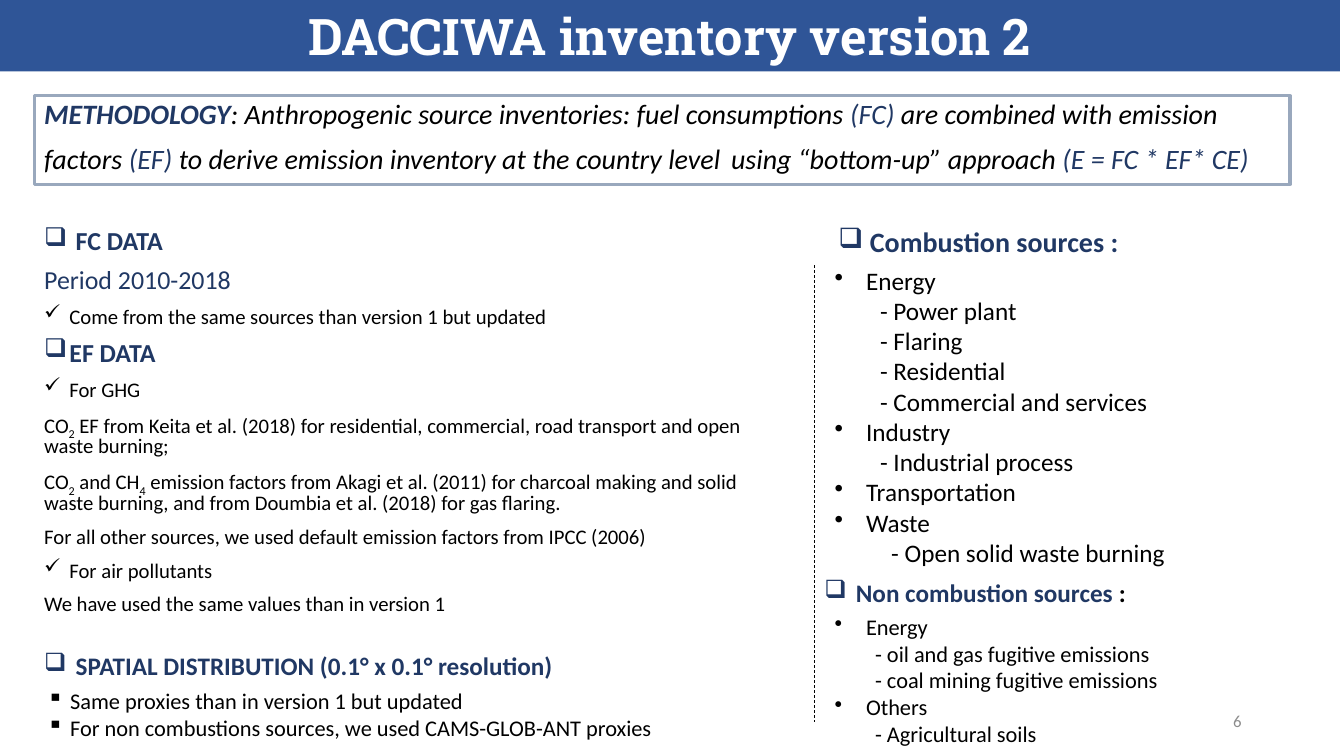
from lxml import etree
from pptx import Presentation
from pptx.dml.color import RGBColor
from pptx.enum.dml import MSO_LINE
from pptx.enum.shapes import MSO_CONNECTOR, MSO_SHAPE
from pptx.enum.text import MSO_ANCHOR, PP_ALIGN
from pptx.oxml.ns import qn
from pptx.util import Pt

RECTANGLE = MSO_SHAPE.RECTANGLE
STRAIGHT = MSO_CONNECTOR.STRAIGHT
DASH = MSO_LINE.DASH
TOP, MIDDLE = MSO_ANCHOR.TOP, MSO_ANCHOR.MIDDLE
CENTER, RIGHT = PP_ALIGN.CENTER, PP_ALIGN.RIGHT
NAVY, BLACK = "203864", "000000"
BOX, CHECK, DOT, SQUARE = "❑", "✓", "•", "▪"


def rgb(value):
    return RGBColor.from_string(value)


class InventorySlide:
    def __init__(self, slide, font="Calibri"):
        self.shapes = slide.shapes
        self.font = font

    def fill_frame(self, frame, paragraphs, anchor=TOP, **style):
        frame.word_wrap = True
        frame.vertical_anchor = anchor
        for index, (runs, own) in enumerate(paragraphs):
            paragraph = frame.add_paragraph() if index else frame.paragraphs[0]
            self.fill_paragraph(paragraph, runs, {**style, **own})

    def fill_paragraph(self, paragraph, runs, style):
        layout = {
            "alignment": style.get("align"),
            "line_spacing": style.get("spacing"),
            "space_before": Pt(style.get("before", 0)),
        }
        for name, value in layout.items():
            setattr(paragraph, name, value)
        properties = paragraph._p.get_or_add_pPr()
        hang = style.get("hang", 0)
        properties.set("marL", str(Pt(style.get("indent", hang))))
        properties.set("indent", str(-Pt(hang)))
        if "bullet" in style:
            etree.SubElement(properties, qn("a:buChar")).set("char", style["bullet"])
        for text, own in [(runs, {})] if isinstance(runs, str) else runs:
            self.add_run(paragraph, text, {**style, **own})

    def add_run(self, paragraph, text, style):
        run = paragraph.add_run()
        run.text = text
        formats = {
            "name": style.get("font", self.font),
            "size": Pt(style["size"]),
            "bold": style.get("bold", False),
            "italic": style.get("italic", False),
        }
        for name, value in formats.items():
            setattr(run.font, name, value)
        run.font.color.rgb = rgb(style.get("color", BLACK))
        if "baseline" in style:
            run._r.get_or_add_rPr().set("baseline", str(style["baseline"]))

    def text(self, place, paragraphs, **style):
        box = self.shapes.add_textbox(*map(Pt, place))
        self.fill_frame(box.text_frame, paragraphs, **style)

    def heading(self, place, runs, size=18):
        self.text(place, [(runs, {})], size=size, color=NAVY, bold=True,
                  bullet=BOX, hang=22.5)

    def panel(self, place, paragraphs, fill=None, line=None, **style):
        panel = self.shapes.add_shape(RECTANGLE, *map(Pt, place))
        panel.shadow.inherit = False
        if fill:
            panel.fill.solid()
            panel.fill.fore_color.rgb = rgb(fill)
        else:
            panel.fill.background()
        if line:
            panel.line.color.rgb = rgb(line)
            panel.line.width = Pt(2.25)
        else:
            panel.line.fill.background()
        self.fill_frame(panel.text_frame, paragraphs, **style)

    def divider(self, x, top, bottom):
        divider = self.shapes.add_connector(STRAIGHT, Pt(x), Pt(top), Pt(x), Pt(bottom))
        divider.line.color.rgb = rgb(BLACK)
        divider.line.width = Pt(0.5)
        divider.line.dash_style = DASH
        etree.SubElement(divider._element.spPr, qn("a:effectLst"))


def main():
    presentation = Presentation()
    presentation.slide_width, presentation.slide_height = Pt(960), Pt(540)
    page = InventorySlide(presentation.slides.add_slide(presentation.slide_layouts[6]))

    navy = {"color": NAVY}
    subscript = {"baseline": -25000}
    section = {"size": 18.5, "color": NAVY, "bold": True, "bullet": BOX, "hang": 18}
    checked = {"bullet": CHECK, "hang": 18}
    item = {"bullet": DOT, "hang": 22.5}
    source = {"indent": 32.5}
    fugitive = {"indent": 29}

    page.text((24.5, 161.3, 525, 288.7), [
        ("FC DATA", {**section, "hang": 22.5}),
        ("Period 2010-2018", {"size": 18.5, "color": NAVY}),
        ("Come from the same sources than version 1 but updated", checked),
        ("EF DATA", section),
        ("For GHG", checked),
        ([("CO", {}), ("2", subscript),
          (" EF from Keita et al. (2018) for residential, commercial, road transport "
           "and open waste burning;", {})], {}),
        ([("CO", {}), ("2", subscript), (" and CH", {}), ("4", subscript),
          (" emission factors from Akagi et al. (2011) for charcoal making and solid "
           "waste burning, and from Doumbia et al. (2018) for gas flaring.", {})], {}),
        ("For all other sources, we used default emission factors from IPCC (2006)", {}),
        ("For air pollutants", checked),
        ("We have used the same values than in version 1", {}),
    ], size=14.8, spacing=0.8, before=10)

    page.panel((24.5, 68.4, 897, 63.4), [([
        ("METHODOLOGY", {**navy, "bold": True}),
        (": Anthropogenic source inventories: fuel consumptions ", {}),
        ("(FC) ", navy),
        ("are combined with emission factors ", {}),
        ("(EF) ", navy),
        ("to derive emission inventory at the country level", {}),
        (" ", {"size": 32}),
        ("using “bottom-up” approach ", {}),
        ("(E = FC * EF* CE)", navy),
    ], {})], line="99A8BD", size=20, italic=True, spacing=0.9, before=10)

    page.panel((0, 0, 957, 51), [("DACCIWA inventory version 2", {})], fill="2F5597",
               font="Roboto Slab", size=36, color="FFFFFF", bold=True, align=CENTER)
    page.divider(581.8, 189.4, 515.5)
    page.text((678, 500.4, 216, 28.8), [("6", {})], anchor=MIDDLE,
              size=12, color="8C8C8C", align=RIGHT)

    page.text((26.6, 487.4, 651, 46), [
        ("Same proxies than in version 1 but updated", {}),
        ("For non combustions sources, we used CAMS-GLOB-ANT proxies", {}),
    ], size=16, bullet=SQUARE, hang=16.5)
    page.heading((24.5, 460.8, 394, 28.8), "SPATIAL DISTRIBUTION (0.1° x 0.1° resolution)")

    page.text((589, 185.8, 294.5, 247), [
        ("Energy", item),
        ("- Power plant", source),
        ("- Flaring", source),
        ("- Residential", source),
        ("- Commercial and services", source),
        ("Industry", item),
        ("- Industrial process", source),
        ("Transportation", item),
        ("Waste", item),
        ("- Open solid waste burning", {"indent": 40.5}),
    ], size=18)
    page.heading((591.8, 157, 268, 31.7), "Combustion sources :", size=20)
    page.heading((581.8, 409, 240.5, 28.8),
                 [("Non combustion sources ", {}), (":", {"color": BLACK})])
    page.text((589, 434.2, 339, 123.8), [
        ("Energy", item),
        ("- oil and gas fugitive emissions", fugitive),
        ("- coal mining fugitive emissions", fugitive),
        ("Others", item),
        ("- Agricultural soils", fugitive),
    ], size=16)

    presentation.save("out.pptx")


if __name__ == "__main__":
    main()
